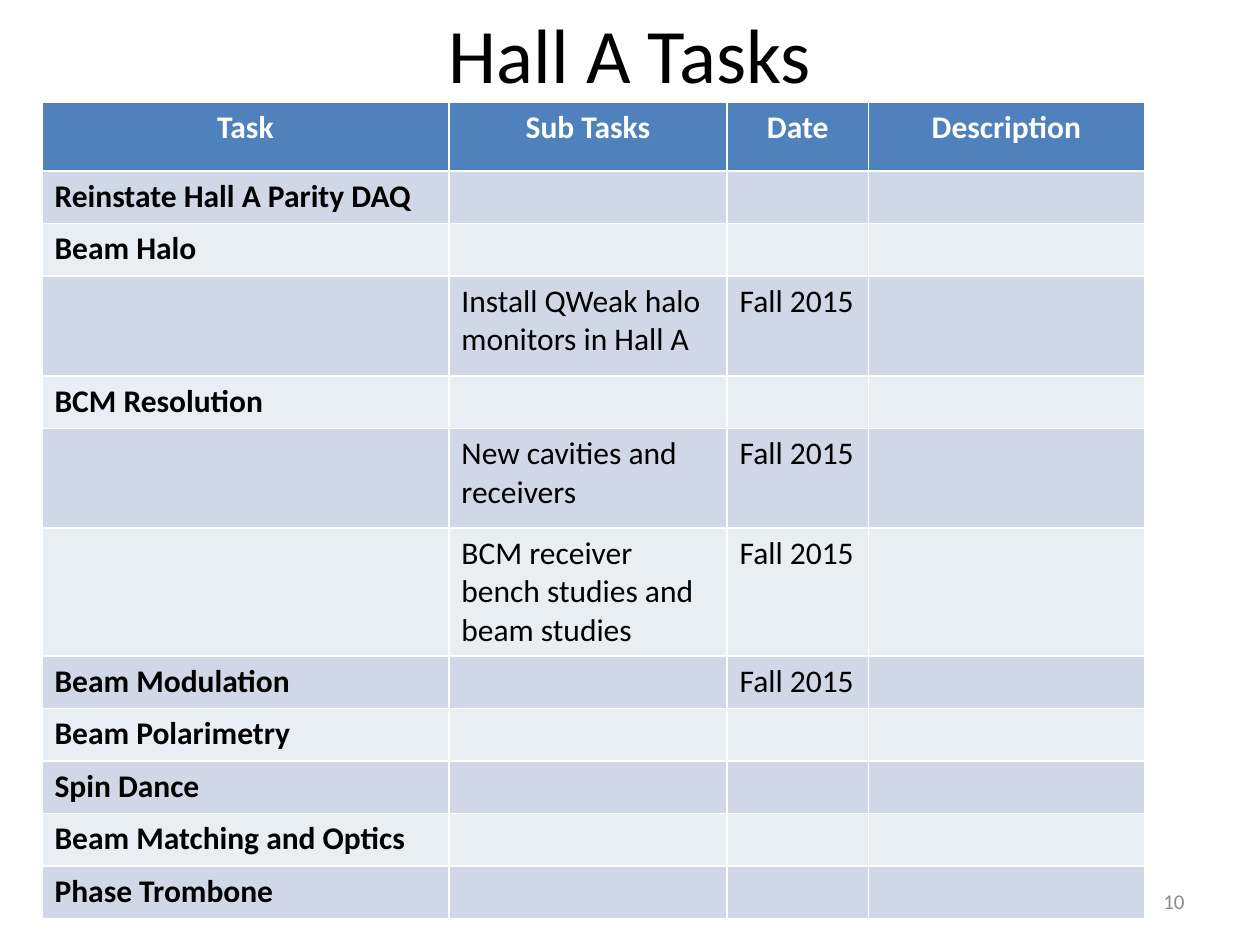
from pptx import Presentation
from pptx.dml.color import RGBColor
from pptx.enum.text import MSO_ANCHOR, PP_ALIGN
from pptx.util import Pt

EMU_PER_PX = 3810
BLACK = RGBColor(0x00, 0x00, 0x00)
WHITE = RGBColor(0xFF, 0xFF, 0xFF)
GRAY = RGBColor(0x8C, 0x8C, 0x8C)
HEADER_BLUE = RGBColor(0x4F, 0x81, 0xBD)
BANDS = (RGBColor(0xD0, 0xD8, 0xE8), RGBColor(0xE9, 0xED, 0xF4))

TITLE_FORMAT = {"size": Pt(44), "bold": False}
HEADER_FORMAT = {"size": Pt(18), "bold": True}
TASK_FORMAT = {"size": Pt(18), "bold": True}
DETAIL_FORMAT = {"size": Pt(18), "bold": False}
NUMBER_FORMAT = {"size": Pt(12), "bold": False}

COLUMN_WIDTHS = (775, 530, 269, 526)
HEADER_HEIGHT, SINGLE_LINE, DOUBLE_LINE = 131, 100, 190
HEADERS = ("Task", "Sub Tasks", "Date", "Description")
TASKS = (
    ("Reinstate Hall A Parity DAQ", "", "", ""),
    ("Beam Halo", "", "", ""),
    ("", "Install QWeak halo monitors in Hall A", "Fall 2015", ""),
    ("BCM Resolution", "", "", ""),
    ("", "New cavities and receivers", "Fall 2015", ""),
    ("", "BCM receiver bench studies and beam studies", "Fall 2015", ""),
    ("Beam Modulation", "", "Fall 2015", ""),
    ("Beam Polarimetry", "", "", ""),
    ("Spin Dance", "", "", ""),
    ("Beam Matching and Optics", "", "", ""),
    ("Phase Trombone", "", "", ""),
)


def px(length):
    """Turn px into EMU."""
    return length * EMU_PER_PX


class SlideBuilder:
    """Hold the font and the current slide, and add elements to it."""

    def __init__(self, slide, font_name="Calibri"):
        """Keep the slide and the font used on it."""
        self.slide = slide
        self.font_name = font_name

    def set_text(self, text_frame, text, style, color, alignment=PP_ALIGN.LEFT):
        """Put one formatted paragraph into a text frame."""
        text_frame.text = text
        paragraph = text_frame.paragraphs[0]
        paragraph.alignment = alignment
        font = paragraph.runs[0].font
        for name, value in {"name": self.font_name, **style}.items():
            setattr(font, name, value)
        font.color.rgb = color

    def title(self, text, left, top, width, height):
        """Fill and move the title placeholder."""
        shape = self.slide.shapes.title
        box = {"left": left, "top": top, "width": width, "height": height}
        for name, value in box.items():
            setattr(shape, name, px(value))
        shape.text_frame.vertical_anchor = MSO_ANCHOR.MIDDLE
        self.set_text(shape.text_frame, text, TITLE_FORMAT, BLACK, PP_ALIGN.CENTER)

    def page_number(self, text, *box):
        """Add the page number in a right-aligned text box."""
        shape = self.slide.shapes.add_textbox(*map(px, box))
        shape.text_frame.word_wrap = True
        shape.text_frame.vertical_anchor = MSO_ANCHOR.MIDDLE
        self.set_text(shape.text_frame, text, NUMBER_FORMAT, GRAY, PP_ALIGN.RIGHT)

    def cell(self, cell, text, fill, *text_format):
        """Fill one table cell with colour and text."""
        cell.fill.solid()
        cell.fill.fore_color.rgb = fill
        if text:
            self.set_text(cell.text_frame, text, *text_format)

    def task_table(self, left, top):
        """Add the task table with its header and banded rows."""
        heights = [HEADER_HEIGHT]
        heights += [DOUBLE_LINE if task[1] else SINGLE_LINE for task in TASKS]
        box = (left, top, sum(COLUMN_WIDTHS), sum(heights))
        table = self.slide.shapes.add_table(len(heights), len(HEADERS), *map(px, box)).table
        for column, width in zip(table.columns, COLUMN_WIDTHS):
            column.width = px(width)
        for row, height in zip(table.rows, heights):
            row.height = px(height)
        for column, text in enumerate(HEADERS):
            self.cell(table.cell(0, column), text, HEADER_BLUE, HEADER_FORMAT, WHITE, PP_ALIGN.CENTER)
        for index, task in enumerate(TASKS):
            for column, text in enumerate(task):
                style = DETAIL_FORMAT if column else TASK_FORMAT
                self.cell(table.cell(index + 1, column), text, BANDS[index % 2], style, BLACK)


def main():
    """Build the Hall A tasks slide."""
    presentation = Presentation()
    presentation.slide_width = px(2400)
    presentation.slide_height = px(1800)
    slide = presentation.slides.add_slide(presentation.slide_layouts[5])
    builder = SlideBuilder(slide)
    builder.title("Hall A Tasks", 120, 0, 2160, 200)
    builder.task_table(80, 195)
    builder.page_number("10", 1720, 1668, 560, 96)
    presentation.save("out.pptx")


if __name__ == "__main__":
    main()
